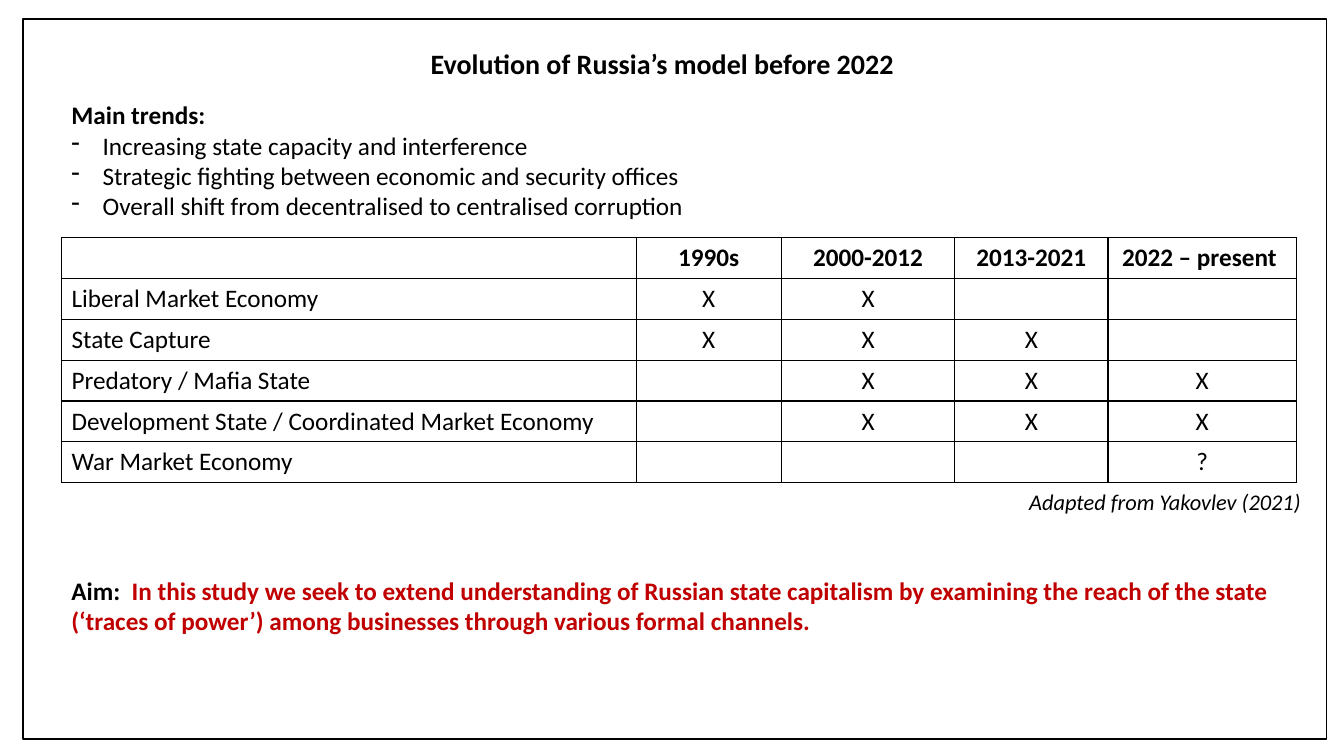
from lxml import etree
from pptx import Presentation
from pptx.dml.color import RGBColor
from pptx.enum.shapes import MSO_SHAPE
from pptx.enum.text import MSO_AUTO_SIZE, PP_ALIGN
from pptx.oxml.ns import qn
from pptx.util import Inches, Pt

LEFT, CENTER, RIGHT = PP_ALIGN.LEFT, PP_ALIGN.CENTER, PP_ALIGN.RIGHT
RECTANGLE = MSO_SHAPE.RECTANGLE
FIT_SHAPE = MSO_AUTO_SIZE.SHAPE_TO_FIT_TEXT
BLACK = RGBColor(0x00, 0x00, 0x00)
RED = RGBColor(0xC0, 0x00, 0x00)
FONT = "Calibri"


def style(paragraph, size=18, bold=False, italic=False, align=LEFT):
    paragraph.alignment = align
    font = paragraph.font
    font.name, font.size = FONT, Pt(size)
    font.bold, font.italic = bold, italic
    font.color.rgb = BLACK


def add_text(left, top, width, height, text="", **look):
    box = slide.shapes.add_textbox(
        Inches(left), Inches(top), Inches(width), Inches(height))
    frame = box.text_frame
    frame.word_wrap = True
    frame.auto_size = FIT_SHAPE
    frame.text = text
    for paragraph in frame.paragraphs:
        style(paragraph, **look)
    return frame


presentation = Presentation()
presentation.slide_width = Inches(13.33)
presentation.slide_height = Inches(7.5)
slide = presentation.slides.add_slide(presentation.slide_layouts[6])

# Frame around the slide
border = slide.shapes.add_shape(
    RECTANGLE, Inches(0.23), Inches(0.19), Inches(12.93), Inches(7.14))
border.shadow.inherit = False
border.fill.background()
border.line.color.rgb = BLACK
border.line.width = Pt(1)

# Title
add_text(3.84, 0.41, 5.52, 0.44, "Evolution of Russia’s model before 2022 ",
         size=20, bold=True, align=CENTER)

# Main trends with dash bullets
trends = add_text(0.61, 0.94, 7.98, 1.31, "\n".join([
    "Main trends:",
    "Increasing state capacity and interference",
    "Strategic fighting between economic and security offices",
    "Overall shift from decentralised to centralised corruption",
]))
heading, *items = trends.paragraphs
heading.font.bold = True
for item in items:
    properties = item._p.get_or_add_pPr()
    properties.set("marL", str(Inches(0.31)))
    properties.set("indent", str(-Inches(0.31)))
    bullet = etree.Element(qn("a:buChar"), char="-")
    properties.insert(0, bullet)

# Table of models by period
COLUMN_WIDTHS = [5.7, 1.44, 1.72, 1.52, 1.87]
ROW_HEIGHT = 0.405
ROWS = [
    ["", "1990s", "2000-2012", "2013-2021", "2022 – present "],
    ["Liberal Market Economy", "X", "X", "", ""],
    ["State Capture", "X", "X", "X", ""],
    ["Predatory / Mafia State", "", "X", "X", "X"],
    ["Development State / Coordinated Market Economy", "", "X", "X", "X"],
    ["War Market Economy", "", "", "", "?"],
]
table = slide.shapes.add_table(
    len(ROWS), len(COLUMN_WIDTHS), Inches(0.61), Inches(2.36),
    Inches(sum(COLUMN_WIDTHS)), Inches(ROW_HEIGHT * len(ROWS))).table
table.first_row = table.horz_banding = False
for column, width in zip(table.columns, COLUMN_WIDTHS):
    column.width = Inches(width)
for row_index, values in enumerate(ROWS):
    for column_index, value in enumerate(values):
        cell = table.cell(row_index, column_index)
        cell.text = value
        style(cell.text_frame.paragraphs[0], bold=row_index == 0,
              align=CENTER if column_index else LEFT)
        cell.fill.background()
        cell_properties = cell._tc.get_or_add_tcPr()
        for position, side in enumerate(["lnL", "lnR", "lnT", "lnB"]):
            edge = etree.Element(qn(f"a:{side}"), w=str(Pt(1)))
            fill = etree.SubElement(edge, qn("a:solidFill"))
            etree.SubElement(fill, qn("a:srgbClr"), val=str(BLACK))
            cell_properties.insert(position, edge)

# Credit below the table
add_text(9.94, 4.79, 3.06, 0.37, "Adapted from Yakovlev (2021)",
         size=16, italic=True, align=RIGHT)

# Aim of the study
aim = add_text(0.61, 5.66, 12.4, 0.71, "Aim:  ", bold=True)
statement = aim.paragraphs[0].add_run()
statement.text = (
    "In this study we seek to extend understanding of Russian state capitalism "
    "by examining the reach of the state (‘traces of power’) among businesses "
    "through various formal channels.")
statement.font.color.rgb = RED

presentation.save("out.pptx")
